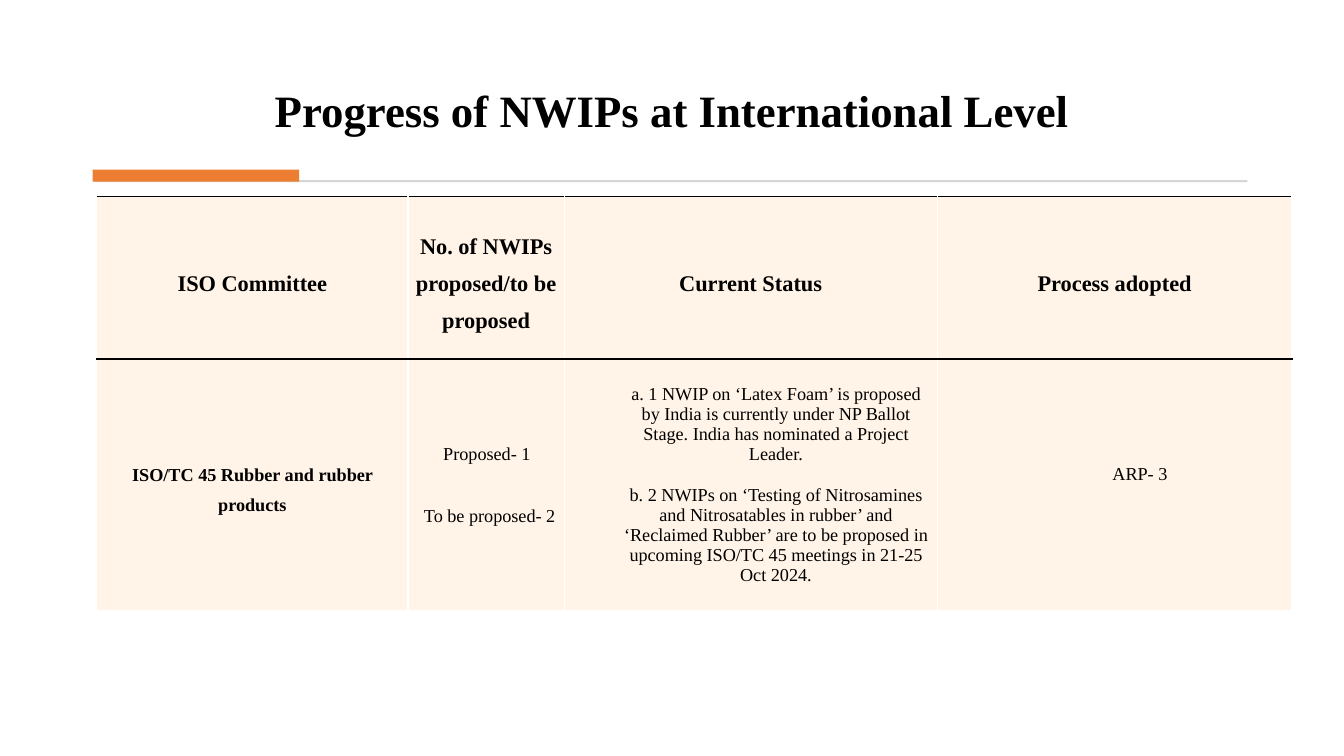
from lxml import etree
from pptx import Presentation
from pptx.dml.color import RGBColor
from pptx.enum import shapes, text
from pptx.oxml import ns
from pptx.util import Pt

BLACK = RGBColor(0x00, 0x00, 0x00)
WHITE = RGBColor(0xFF, 0xFF, 0xFF)
CREAM = RGBColor(0xFF, 0xF4, 0xE7)
ORANGE = RGBColor(0xED, 0x7D, 0x31)
GREY = RGBColor(0xD5, 0xD5, 0xD5)

HEADINGS = ["ISO Committee", "No. of NWIPs proposed/to be proposed",
            "Current Status", "Process adopted"]
COLUMN_WIDTHS = [222.5, 111.5, 266.5, 253.5]
ROW_HEIGHTS = [116, 180]
TIGHT = (1.5, 0.7, 1.5, 0.7)
LOOSE = (5, 0, 5, 0)
LINE = 15  # height of one line of body text

LATEX_FOAM = ("a. 1 NWIP on ‘Latex Foam’ is proposed by India is currently under "
              "NP Ballot Stage. India has nominated a Project Leader.")
NITROSAMINES = ("b. 2 NWIPs on ‘Testing of Nitrosamines and Nitrosatables in rubber’ "
                "and ‘Reclaimed Rubber’ are to be proposed in upcoming ISO/TC 45 "
                "meetings in 21-25 Oct 2024.")


def write(paragraph, wording, size=13, bold=False, spacing=1.0, after=0, left=0, first=0):
    """Fill a centred paragraph; left and first are its indents in points."""
    paragraph.alignment = text.PP_ALIGN.CENTER
    paragraph.line_spacing = spacing
    paragraph.space_before = Pt(0)
    paragraph.space_after = Pt(after)
    properties = paragraph._p.get_or_add_pPr()
    properties.set("marL", str(Pt(left)))
    properties.set("indent", str(Pt(first)))
    run = paragraph.add_run()
    run.text = wording
    run.font.name = "Times New Roman"
    run.font.size = Pt(size)
    run.font.bold = bold
    run.font.color.rgb = BLACK


class ProgressSlide:
    def __init__(self, presentation):
        self.slide = presentation.slides.add_slide(presentation.slide_layouts[5])

    def title(self, wording, left, top, width, height):
        heading = self.slide.shapes.title
        heading.left, heading.top = Pt(left), Pt(top)
        heading.width, heading.height = Pt(width), Pt(height)
        frame = heading.text_frame
        frame.word_wrap = True
        frame.auto_size = text.MSO_AUTO_SIZE.NONE
        frame.vertical_anchor = text.MSO_ANCHOR.MIDDLE
        write(frame.paragraphs[0], wording, size=32, bold=True, spacing=0.9)

    def bar(self, color, left, top, width, height):
        bar = self.slide.shapes.add_shape(shapes.MSO_SHAPE.RECTANGLE, Pt(left),
                                          Pt(top), Pt(width), Pt(height))
        bar.shadow.inherit = False
        bar.fill.solid()
        bar.fill.fore_color.rgb = color
        bar.line.fill.background()

    def table(self, left, top, widths, heights):
        grid = self.slide.shapes.add_table(
            len(heights), len(widths), Pt(left), Pt(top),
            Pt(sum(widths)), Pt(sum(heights))).table
        grid.first_row = grid.horz_banding = False
        for column, width in zip(grid.columns, widths):
            column.width = Pt(width)
        for row, height in zip(grid.rows, heights):
            row.height = Pt(height)
        return grid

    def borders(self, cell, **colors):
        """Draw one-point cell borders, given in the order L, R, T, B."""
        properties = cell._tc.get_or_add_tcPr()
        for side, color in colors.items():
            edge = etree.SubElement(properties, ns.qn("a:ln" + side), w=str(Pt(1)))
            fill = etree.SubElement(edge, ns.qn("a:solidFill"))
            etree.SubElement(fill, ns.qn("a:srgbClr"), val=str(color))

    def cell(self, cell, paragraphs, margins, top, bottom):
        """Fill a cell with (wording, format) pairs."""
        self.borders(cell, L=WHITE, R=WHITE, T=top, B=bottom)
        cell.fill.solid()
        cell.fill.fore_color.rgb = CREAM
        cell.vertical_anchor = text.MSO_ANCHOR.MIDDLE
        (cell.margin_left, cell.margin_top,
         cell.margin_right, cell.margin_bottom) = map(Pt, margins)
        for index, (wording, style) in enumerate(paragraphs):
            frame = cell.text_frame
            paragraph = frame.add_paragraph() if index else frame.paragraphs[0]
            write(paragraph, wording, **style)


def main():
    presentation = Presentation()
    presentation.slide_width, presentation.slide_height = Pt(960), Pt(540)
    page = ProgressSlide(presentation)
    page.title("Progress of NWIPs at International Level", 66, 28.5, 828, 104.5)
    page.bar(GREY, 68, 128.7, 823, 1.5)
    page.bar(ORANGE, 66.2, 121.2, 147.5, 8.6)

    progress = page.table(69, 140.4, COLUMN_WIDTHS, ROW_HEIGHTS)
    for column, heading in enumerate(HEADINGS):
        page.cell(progress.cell(0, column),
                  [(heading, dict(size=16, bold=True, spacing=1.5))],
                  TIGHT, BLACK, BLACK)

    rubber = [
        ([("ISO/TC 45 Rubber and rubber products", dict(bold=True, spacing=1.5))], TIGHT),
        ([("Proposed- 1", dict(left=36, first=-35, after=2 * LINE)),
          ("To be proposed- 2", dict(left=21.5, first=-16.5))], LOOSE),
        ([(LATEX_FOAM, dict(left=36, after=LINE)),
          (NITROSAMINES, dict(left=36))], LOOSE),
        ([("ARP- 3", dict(left=36))], (5, 0, 5, LINE)),
    ]
    for column, (paragraphs, margins) in enumerate(rubber):
        page.cell(progress.cell(1, column), paragraphs, margins, BLACK, WHITE)

    presentation.save("out.pptx")


if __name__ == "__main__":
    main()
